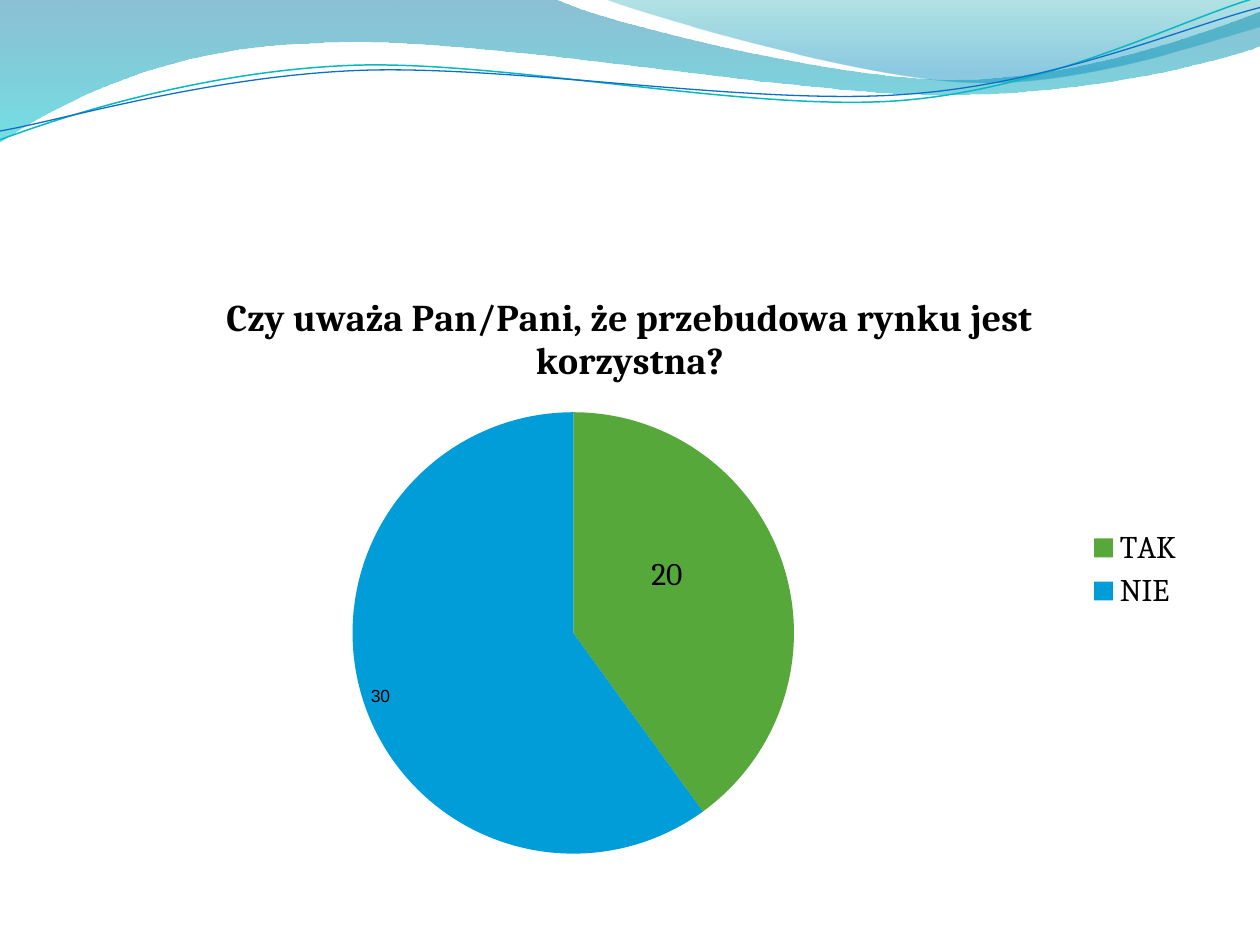
from lxml.etree import SubElement
from pptx import Presentation
from pptx.chart.data import CategoryChartData
from pptx.dml.color import RGBColor
from pptx.enum.chart import XL_CHART_TYPE as ChartType
from pptx.enum.chart import XL_LABEL_POSITION as LabelPosition
from pptx.enum.chart import XL_LEGEND_POSITION as LegendPosition
from pptx.oxml import parse_xml
from pptx.oxml.ns import nsdecls, qn
from pptx.util import Inches, Pt

BLACK = RGBColor(0x00, 0x00, 0x00)
GREEN = RGBColor(0x55, 0xA8, 0x39)
BLUE = RGBColor(0x00, 0x9D, 0xD9)
DEEP_BLUE = RGBColor(0x00, 0x74, 0xA1)
AQUA = RGBColor(0x00, 0xC6, 0xCF)
TEAL = RGBColor(0x00, 0xA1, 0xA9)
SEA_BLUE = RGBColor(0x00, 0x8B, 0xBF)
TEAL_LINE = RGBColor(0x0A, 0xB8, 0xBF)
BLUE_LINE = RGBColor(0x0F, 0x6F, 0xC6)

FONT = "Cambria"
QUESTION = "Czy uważa Pan/Pani, że przebudowa rynku jest korzystna?"

# Each segment holds one end point (straight) or two controls and an end point (curve).
LARGE_WAVE = [
    [(4.4, -0.01)],
    [(4.76, 0.17), (6.64, 0.63), (7.58, 0.63)],
    [(8.53, 0.63), (9.58, 0.26), (10, 0.09)],
    [(10.01, 0.36)],
    [(9.83, 0.44), (8.7, 0.76), (7.46, 0.75)],
    [(6.22, 0.75), (3.82, 0.28), (2.57, 0.34)],
    [(1.29, 0.36), (0.46, 0.83), (-0.01, 1.13)],
]
SMALL_WAVE = [
    [(5.09, 0.11), (6.82, 0.62), (7.69, 0.65)],
    [(8.56, 0.69), (9.61, 0.32), (10, 0.21)],
    [(10, 0)],
]
TEAL_STRAND = [
    [(0.48, 0.93), (1.58, 0.57), (2.77, 0.52)],
    [(3.95, 0.47), (5.93, 0.89), (7.13, 0.8)],
    [(8.33, 0.71), (9.38, 0.15), (9.98, -0.02)],
]
BLUE_STRAND = [
    [(0.47, 0.96), (1.64, 0.61), (2.83, 0.56)],
    [(4.03, 0.51), (5.97, 0.84), (7.17, 0.75)],
    [(8.36, 0.67), (9.41, 0.21), (10, 0.06)],
]


def to_emu(point):
    return tuple(Inches(length) for length in point)


def add_outline(slide, start, segments, close):
    """Add a freeform, then turn each run of two controls and an end into a curve."""
    builder = slide.shapes.build_freeform(*to_emu(start))
    builder.add_line_segments(
        [to_emu(point) for segment in segments for point in segment], close=close)
    outline = builder.convert_to_shape()
    outline.shadow.inherit = False

    lines = iter(list(outline._element.iter(qn("a:lnTo"))))
    for segment in segments:
        parts = [next(lines) for _ in segment]
        if len(parts) == 3:
            curve = parse_xml(f'<a:cubicBezTo {nsdecls("a")}/>')
            parts[0].addprevious(curve)
            for part in parts:
                curve.append(part[0])
                part.getparent().remove(part)
    return outline


def add_wave(slide, start, segments, stops):
    """Add a band with a downward gradient; stops are (position, colour, opacity %)."""
    wave = add_outline(slide, start, segments, close=True)
    wave.line.fill.background()
    wave.fill.gradient()
    wave.fill.gradient_angle = 270
    for stop, (position, colour, _) in zip(wave.fill.gradient_stops, stops):
        stop.position = position
        stop.color.rgb = colour
    colours = wave._element.spPr.iter(qn("a:srgbClr"))
    for colour_xml, (_, _, opacity) in zip(colours, stops):
        SubElement(colour_xml, qn("a:alpha"), val=str(opacity * 1000))


def add_strand(slide, start, segments, colour, width):
    strand = add_outline(slide, start, segments, close=False)
    strand.fill.background()
    strand.line.color.rgb = colour
    strand.line.width = Pt(width)


def set_font(font, name, size, bold=False):
    font.name = name
    font.size = Pt(size)
    font.bold = bold
    font.color.rgb = BLACK


def manual_layout(settings):
    """Make a chart layout from pairs of setting and value, in schema order."""
    content = "".join(f'<c:{key} val="{value}"/>' for key, value in settings.items())
    return parse_xml(f'<c:layout {nsdecls("c")}><c:manualLayout>{content}'
                     '</c:manualLayout></c:layout>')


def place_plot(chart, x, y, w, h):
    """Fix the pie's area, in fractions of the chart frame."""
    plot_area = chart._chartSpace.chart.plotArea
    for old_layout in plot_area.findall(qn("c:layout")):
        plot_area.remove(old_layout)
    plot_area.insert(0, manual_layout({
        "layoutTarget": "inner", "xMode": "edge", "yMode": "edge",
        "x": x, "y": y, "w": w, "h": h}))


def add_answer_pie(slide):
    answers = CategoryChartData()
    answers.categories = ["TAK", "NIE"]
    answers.add_series(QUESTION, (20, 30))
    chart = slide.shapes.add_chart(
        ChartType.PIE, Inches(0.5), Inches(2.12), Inches(9), Inches(4.8), answers).chart
    set_font(chart.font, FONT, 18)

    chart.has_title = True
    title = chart.chart_title.text_frame.paragraphs[0].add_run()
    title.text = QUESTION
    set_font(title.font, FONT, 21.6, bold=True)
    chart.chart_title.include_in_layout = False

    chart.has_legend = True
    chart.legend.position = LegendPosition.RIGHT
    chart.legend.include_in_layout = False
    set_font(chart.legend.font, FONT, 18)

    pie = chart.plots[0]
    pie.vary_by_categories = True
    slices = [
        (GREEN, LabelPosition.CENTER, FONT, 18),
        (BLUE, LabelPosition.BEST_FIT, "Arial", 10),
    ]
    points = pie.series[0].points
    for index, (colour, position, font_name, size) in enumerate(slices):
        point = points[index]
        point.format.fill.solid()
        point.format.fill.fore_color.rgb = colour
        set_font(point.data_label.font, font_name, size)
        point.data_label.position = position
    yes_label = points[0].data_label._get_or_add_dLbl()
    yes_label.insert(1, manual_layout({"x": -0.01, "y": -0.04}))
    place_plot(chart, 0.25, 0.24, 0.4, 0.73)


def main():
    deck = Presentation()
    deck.slide_width, deck.slide_height = Inches(10), Inches(7.5)
    slide = deck.slides.add_slide(deck.slide_layouts[6])

    add_wave(slide, (0, 0), LARGE_WAVE, [(0, DEEP_BLUE, 45), (1, AQUA, 55)])
    add_wave(slide, (4.79, -0.01), SMALL_WAVE, [(0, TEAL, 30), (0.8, SEA_BLUE, 45)])
    add_strand(slide, (0, 1.11), TEAL_STRAND, TEAL_LINE, 0.85)
    add_strand(slide, (0, 1.04), BLUE_STRAND, BLUE_LINE, 0.75)
    add_answer_pie(slide)

    deck.save("out.pptx")


if __name__ == "__main__":
    main()
